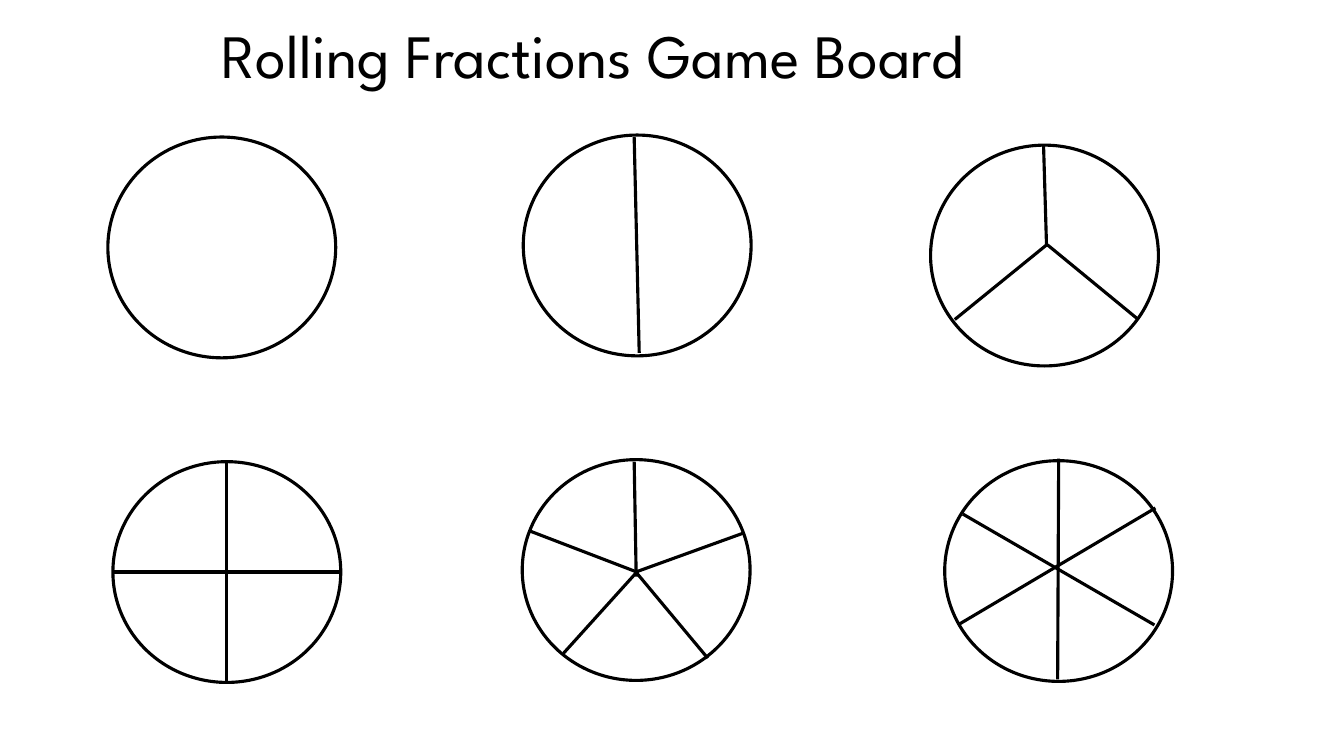
from dataclasses import dataclass

from lxml.etree import SubElement
from pptx import Presentation
from pptx.dml.color import RGBColor
from pptx.enum.shapes import MSO_CONNECTOR, MSO_SHAPE
from pptx.enum.text import MSO_ANCHOR, PP_ALIGN
from pptx.oxml.ns import qn
from pptx.util import Inches, Pt


@dataclass(frozen=True)
class Theme:
    """Colours, font and sizes of the game board."""
    ink: RGBColor = RGBColor(0x00, 0x00, 0x00)
    paper: RGBColor = RGBColor(0xFF, 0xFF, 0xFF)
    font: str = "League Spartan"
    title_size: int = 44
    line_width: float = 2.25


THEME = Theme()
CIRCLE_WIDTH, CIRCLE_HEIGHT = 2.26, 2.19
WHOLE, QUARTERED = MSO_SHAPE.FLOWCHART_CONNECTOR, MSO_SHAPE.FLOWCHART_OR

BOARD = [
    (WHOLE, 1.07, 1.36, []),
    (WHOLE, 5.19, 1.34, [(6.29, 1.36, 6.34, 3.5)]),
    (WHOLE, 9.23, 1.44, [
        (10.35, 1.44, 10.38, 2.45),
        (10.38, 2.43, 9.47, 3.17),
        (10.39, 2.43, 11.29, 3.17),
    ]),
    (QUARTERED, 1.12, 4.58, []),
    (WHOLE, 5.18, 4.56, [
        (6.29, 4.58, 6.31, 5.72),
        (7.37, 5.29, 6.32, 5.67),
        (7.02, 6.53, 6.32, 5.69),
        (6.33, 5.66, 5.59, 6.48),
        (6.33, 5.68, 5.26, 5.27),
    ]),
    (WHOLE, 9.37, 4.57, [
        (10.5, 4.55, 10.49, 6.74),
        (11.46, 5.04, 9.5, 6.2),
        (9.55, 5.1, 11.45, 6.2),
    ]),
]


def write_text(tf, text, size, color, align=PP_ALIGN.LEFT, anchor=MSO_ANCHOR.TOP):
    """Put one formatted line of text into a text frame."""
    tf.word_wrap = True
    tf.vertical_anchor = anchor
    p = tf.paragraphs[0]
    p.alignment = align
    r = p.add_run()
    r.text = text
    r.font.name = THEME.font
    r.font.size = Pt(size)
    r.font.color.rgb = color


def add_title(s, text, left, top, width, height):
    """Move the title placeholder and fill it."""
    sp = s.shapes.title
    sp.left, sp.top = Inches(left), Inches(top)
    sp.width, sp.height = Inches(width), Inches(height)
    write_text(sp.text_frame, text, size=THEME.title_size, color=THEME.ink)


def style_line(line):
    """Apply the board's line colour and width."""
    line.color.rgb = THEME.ink
    line.width = Pt(THEME.line_width)


def add_circle(s, kind, left, top):
    """Draw one circle of the board."""
    sp = s.shapes.add_shape(kind, Inches(left), Inches(top),
                            Inches(CIRCLE_WIDTH), Inches(CIRCLE_HEIGHT))
    sp.shadow.inherit = False
    sp.fill.solid()
    sp.fill.fore_color.rgb = THEME.paper
    style_line(sp.line)


def add_divider(s, *ends):
    """Draw one straight line that divides a circle."""
    line = s.shapes.add_connector(MSO_CONNECTOR.STRAIGHT, *map(Inches, ends))
    style_line(line.line)
    SubElement(line._element.spPr, qn("a:effectLst"))


def main():
    """Build and save the game board slide."""
    prs = Presentation()
    prs.slide_width, prs.slide_height = Inches(13.33), Inches(7.5)
    s = prs.slides.add_slide(prs.slide_layouts[5])
    s.background.fill.solid()
    s.background.fill.fore_color.rgb = THEME.paper
    add_title(s, "Rolling Fractions Game Board", 2.1, 0.12, 9.15, 0.84)
    for kind, left, top, dividers in BOARD:
        add_circle(s, kind, left, top)
        for ends in dividers:
            add_divider(s, *ends)
    prs.save("out.pptx")


if __name__ == "__main__":
    main()
